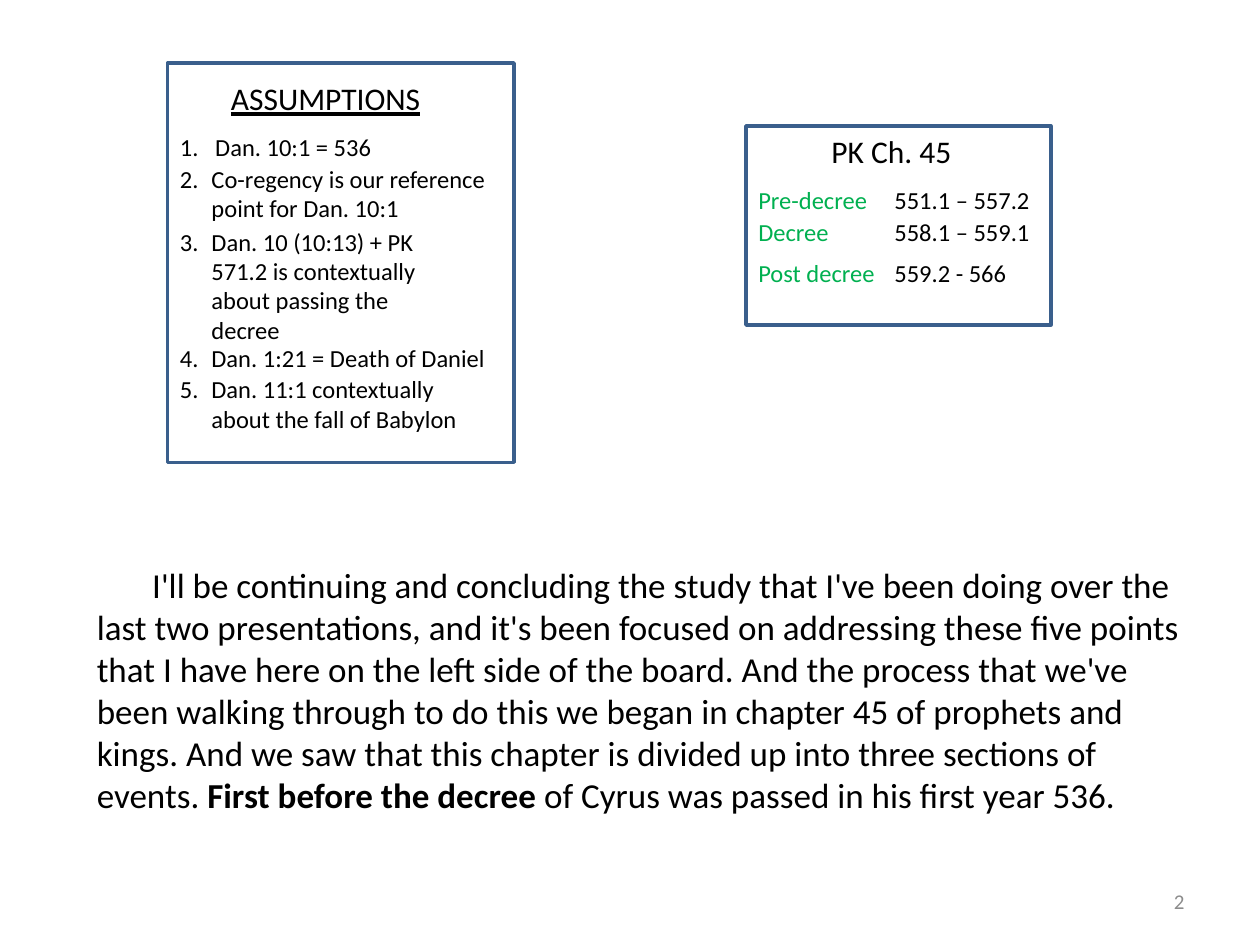
import pptx
import pptx.util
import pptx.dml.color
import pptx.enum.shapes
import pptx.enum.text
import pptx.oxml
import pptx.oxml.ns

Inches = pptx.util.Inches
Pt = pptx.util.Pt
Align = pptx.enum.text.PP_ALIGN
BLACK = "000000"
GREEN = "00B050"
GREY = "8C8C8C"
BORDER = "3A5F8C"
LIST_LEFT = 1.33
ITEM_LEFT = 1.58
DECREE_LEFT = 5.92


def color(value):
    return pptx.dml.color.RGBColor.from_string(value)


def add_text(slide, box, text, size=14, fill=BLACK, align=Align.LEFT):
    shape = slide.shapes.add_textbox(*map(Inches, box))
    frame = shape.text_frame
    frame.word_wrap = True
    frame.auto_size = pptx.enum.text.MSO_AUTO_SIZE.SHAPE_TO_FIT_TEXT
    paragraph = frame.paragraphs[0]
    paragraph.alignment = align
    paragraph.font.name = "Calibri"
    paragraph.font.size = Pt(size)
    paragraph.font.color.rgb = color(fill)
    paragraph.add_run().text = text
    return shape


def add_tab_stop(paragraph, position):
    tabs = pptx.oxml.parse_xml(
        f'<a:tabLst {pptx.oxml.ns.nsdecls("a")}>'
        f'<a:tab pos="{Inches(position)}" algn="l"/></a:tabLst>'
    )
    paragraph._p.get_or_add_pPr().insert_element_before(tabs, "a:defRPr", "a:extLst")


def add_frame(slide, box):
    shape = slide.shapes.add_shape(
        pptx.enum.shapes.MSO_SHAPE.RECTANGLE, *map(Inches, box)
    )
    shape.shadow.inherit = False
    shape.fill.background()
    shape.line.color.rgb = color(BORDER)
    shape.line.width = Pt(2)


def add_assumptions(slide):
    heading = add_text(slide, (1.5, 0.58, 2.17, 0.4), "ASSUMPTIONS", 18, align=Align.CENTER)
    heading.text_frame.paragraphs[0].font.underline = True
    first = add_text(slide, (LIST_LEFT, 1, 2.33, 0.34), "1.\tDan. 10:1 = 536")
    add_tab_stop(first.text_frame.paragraphs[0], 0.28)
    items = [
        (1.25, 2.42, 0.57, "Co-regency is our reference point for Dan. 10:1"),
        (1.75, 2.08, 1.04, "Dan. 10 (10:13) + PK 571.2 is contextually about passing the decree"),
        (2.67, 2.67, 0.34, "Dan. 1:21 = Death of Daniel"),
        (2.92, 2.33, 0.57, "Dan. 11:1 contextually about the fall of Babylon"),
    ]
    for number, (top, width, height, text) in enumerate(items, start=2):
        add_text(slide, (LIST_LEFT, top, 0.42, 0.34), f"{number}.")
        add_text(slide, (ITEM_LEFT, top, width, height), text)
    add_frame(slide, (LIST_LEFT, 0.5, 2.75, 3.17))


def add_decree_sections(slide):
    add_text(slide, (6.5, 1, 1.5, 0.4), "PK Ch. 45", 18)
    sections = [
        (1.42, "Pre-decree", "551.1 – 557.2"),
        (1.67, "Decree", "558.1 – 559.1"),
        (2, "Post decree", "559.2 - 566"),
    ]
    for top, name, pages in sections:
        shape = add_text(slide, (DECREE_LEFT, top, 2.6, 0.34), name, fill=GREEN)
        paragraph = shape.text_frame.paragraphs[0]
        add_tab_stop(paragraph, 1.08)
        run = paragraph.add_run()
        run.text = f"\t{pages}"
        run.font.color.rgb = color(BLACK)
    add_frame(slide, (DECREE_LEFT, 1, 2.42, 1.58))


def add_narration(slide):
    shape = add_text(
        slide,
        (0.67, 4.42, 8.83, 2.12),
        "I'll be continuing and concluding the study that I've been doing over the last "
        "two presentations, and it's been focused on addressing these five points that I "
        "have here on the left side of the board. And the process that we've been walking "
        "through to do this we began in chapter 45 of prophets and kings. And we saw that "
        "this chapter is divided up into three sections of events.",
        20,
    )
    paragraph = shape.text_frame.paragraphs[0]
    paragraph._p.get_or_add_pPr().set("indent", str(Inches(0.44)))
    emphasis = paragraph.add_run()
    emphasis.text = " First before the decree "
    emphasis.font.bold = True
    paragraph.add_run().text = "of Cyrus was passed in his first year 536."


def add_page_number(slide):
    shape = add_text(slide, (7.17, 6.95, 2.33, 0.4), "2", 12, GREY, Align.RIGHT)
    shape.text_frame.auto_size = pptx.enum.text.MSO_AUTO_SIZE.NONE
    shape.text_frame.vertical_anchor = pptx.enum.text.MSO_ANCHOR.MIDDLE


def main():
    presentation = pptx.Presentation()
    presentation.slide_width = Inches(10)
    presentation.slide_height = Inches(7.5)
    slide = presentation.slides.add_slide(presentation.slide_layouts[6])
    add_assumptions(slide)
    add_decree_sections(slide)
    add_narration(slide)
    add_page_number(slide)
    presentation.save("out.pptx")


if __name__ == "__main__":
    main()
